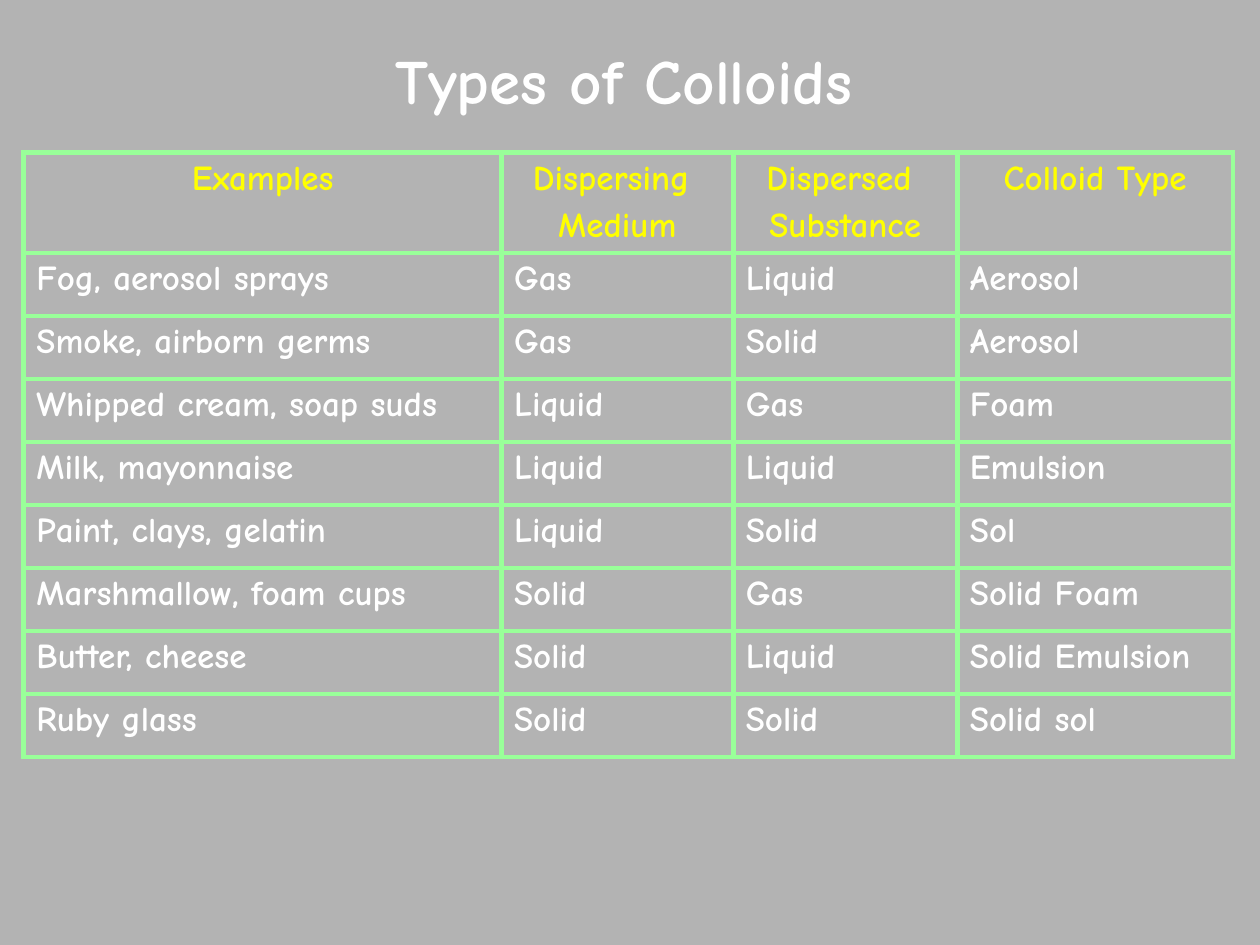
import pptx
import pptx.util
import pptx.dml.color
import pptx.enum.text
import pptx.oxml
import pptx.oxml.ns

Cm = pptx.util.Cm
Pt = pptx.util.Pt
RGBColor = pptx.dml.color.RGBColor
ALIGN = pptx.enum.text.PP_ALIGN

GRAY = RGBColor(0xB3, 0xB3, 0xB3)
WHITE = RGBColor(0xFF, 0xFF, 0xFF)
YELLOW = RGBColor(0xFF, 0xFF, 0x00)
GREEN = RGBColor(0x99, 0xFF, 0x99)
FONT = "Comic Neue"

WIDTHS = [9.63, 4.67, 4.52, 5.56]
HEAD = 2.03
ROW = 1.27
ROWS = [
    ["Examples", "Dispersing \nMedium", "Dispersed \nSubstance", "Colloid Type"],
    ["Fog, aerosol sprays", "Gas", "Liquid", "Aerosol"],
    ["Smoke, airborn germs", "Gas", "Solid", "Aerosol"],
    ["Whipped cream, soap suds", "Liquid", "Gas", "Foam"],
    ["Milk, mayonnaise", "Liquid", "Liquid", "Emulsion"],
    ["Paint, clays, gelatin", "Liquid", "Solid", "Sol"],
    ["Marshmallow, foam cups", "Solid", "Gas", "Solid Foam"],
    ["Butter, cheese", "Solid", "Liquid", "Solid Emulsion"],
    ["Ruby glass", "Solid", "Solid", "Solid sol"],
]


def style(frame, size, color, align):
    for para in frame.paragraphs:
        para.alignment = align
        for run in para.runs:
            run.font.name = FONT
            run.font.size = Pt(size)
            run.font.bold = True
            run.font.color.rgb = color


def border(cell):
    props = cell._tc.get_or_add_tcPr()
    for spot, side in enumerate(["lnL", "lnR", "lnT", "lnB"]):
        line = pptx.oxml.parse_xml(
            f'<a:{side} {pptx.oxml.ns.nsdecls("a")} w="{Pt(3)}">'
            f'<a:solidFill><a:srgbClr val="{GREEN}"/></a:solidFill></a:{side}>'
        )
        props.insert(spot, line)


deck = pptx.Presentation()
deck.slide_width = Cm(25.4)
deck.slide_height = Cm(19.05)
slide = deck.slides.add_slide(deck.slide_layouts[5])
slide.background.fill.solid()
slide.background.fill.fore_color.rgb = GRAY

title = slide.shapes.title
title.left, title.top = Cm(1.78), Cm(0)
title.width, title.height = Cm(21.59), Cm(3.18)
title.text_frame.text = "Types of Colloids"
title.text_frame.vertical_anchor = pptx.enum.text.MSO_ANCHOR.MIDDLE
style(title.text_frame, 36, WHITE, ALIGN.CENTER)

high = HEAD + ROW * (len(ROWS) - 1)
frame = slide.shapes.add_table(
    len(ROWS), len(WIDTHS), Cm(0.48), Cm(3.07), Cm(sum(WIDTHS)), Cm(high)
)
table = frame.table
table.first_row = False
table.horz_banding = False
for col, width in zip(table.columns, WIDTHS):
    col.width = Cm(width)

for r, words in enumerate(ROWS):
    table.rows[r].height = Cm(ROW if r else HEAD)
    color, align = (WHITE, ALIGN.LEFT) if r else (YELLOW, ALIGN.CENTER)
    for c, word in enumerate(words):
        cell = table.cell(r, c)
        cell.fill.background()
        border(cell)
        cell.text_frame.text = word
        style(cell.text_frame, 20, color, align)
        for para in cell.text_frame.paragraphs:
            para.space_before = Pt(4)

deck.save("out.pptx")
